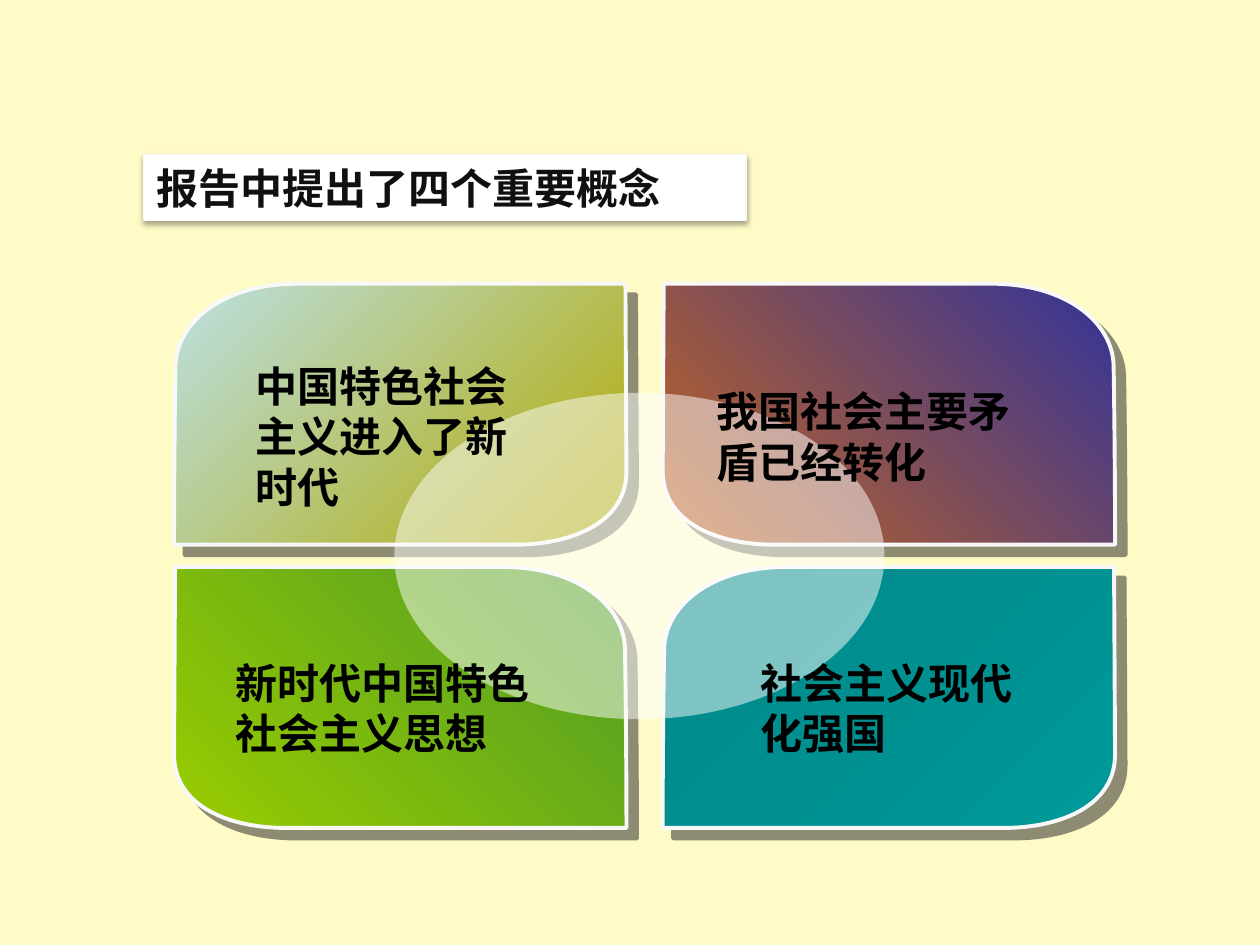
from dataclasses import dataclass

from lxml import etree
from pptx import Presentation, util as u
from pptx.dml.color import RGBColor
from pptx.enum import shapes, text
from pptx.oxml.ns import qn


@dataclass(frozen=True)
class Theme:
    back: str = "FFFBC7"
    card: str = "FFFFFF"
    rim: str = "F9F9F9"
    edge: str = "F8F8F8"
    shade: str = "1C1C1C"
    glow: str = "FEFFFF"
    head: str = "10100F"
    ink: str = "000000"
    black: str = "000000"
    face: str = "Arial"
    title: str = "Noto Sans CJK SC"
    size: int = 24


# Outline of one petal in hundredths of a centimetre: a start point,
# then three control points for each Bezier curve.
PETAL = [
    (214, 526),
    (562, 526), (912, 526), (912, 526),
    (912, 526), (912, 345), (909, 165),
    (907, 79), (815, 0), (663, 0),
    (331, 0), (2, 0), (2, 0),
    (2, 0), (1, 190), (0, 378),
    (0, 478), (102, 523), (214, 526),
]


class Deck:
    def __init__(self, theme):
        self.theme = theme
        self.prs = Presentation()
        self.prs.slide_width, self.prs.slide_height = u.Cm(25.4), u.Cm(19.05)
        self.slide = self.prs.slides.add_slide(self.prs.slide_layouts[6])
        self.fill(self.slide.background, theme.back)

    def fill(self, item, tone):
        item.fill.solid()
        item.fill.fore_color.rgb = RGBColor.from_string(tone)

    def line(self, shape, tone, width):
        shape.line.color.rgb = RGBColor.from_string(tone)
        shape.line.width = u.Pt(width)

    def cast(self, shape, tone, alpha, blur, dist, angle):
        """Give the shape an outer shadow; blur and dist are in points."""
        shape.shadow.inherit = False
        box = shape._element.spPr.find(qn("a:effectLst"))
        shade = etree.SubElement(
            box, qn("a:outerShdw"), blurRad=str(u.Pt(blur)),
            dist=str(u.Pt(dist)), dir=str(angle * 60000),
            algn="ctr", rotWithShape="0")
        self.fade(etree.SubElement(shade, qn("a:srgbClr"), val=tone), alpha)

    def fade(self, node, alpha):
        etree.SubElement(node, qn("a:alpha"), val=str(alpha * 1000))

    def letter(self, shape, words, face, tone):
        """Put bold, left-aligned words into the shape."""
        frame = shape.text_frame
        frame.word_wrap = True
        frame.text = words
        para = frame.paragraphs[0]
        para.alignment = text.PP_ALIGN.LEFT
        font = para.font
        font.name, font.size, font.bold = face, u.Pt(self.theme.size), True
        font.color.rgb = RGBColor.from_string(tone)

    def shape(self, kind, box, tone):
        item = self.slide.shapes.add_shape(kind, *map(u.Cm, box))
        item.shadow.inherit = False
        self.fill(item, tone)
        return item

    def banner(self, words, box):
        look = self.theme
        item = self.shape(shapes.MSO_SHAPE.RECTANGLE, box, look.card)
        self.line(item, look.rim, 0.75)
        self.cast(item, look.black, 35, 3.1, 1.8, 90)
        self.letter(item, words, look.title, look.head)

    def petal(self, left, top, tones, flip):
        pen = self.slide.shapes.build_freeform(*PETAL[0], scale=u.Cm(0.01))
        pen.add_line_segments(PETAL[1:], close=True)
        item = pen.convert_to_shape(u.Cm(left), u.Cm(top))
        self.curve(item)
        if flip:
            item._element.spPr.find(qn("a:xfrm")).set("flipH", "1")
        item.fill.gradient()
        item.fill.gradient_angle = 45
        for stop, tone in zip(item.fill.gradient_stops, tones):
            stop.color.rgb = RGBColor.from_string(tone)
        self.line(item, self.theme.edge, 2.25)
        self.cast(item, self.theme.shade, 50, 0, 8.5, 45)

    def curve(self, item):
        """Turn each run of three line segments into one Bezier curve."""
        lines = list(item._element.iter(qn("a:lnTo")))
        for i in range(0, len(lines), 3):
            bend = etree.Element(qn("a:cubicBezTo"))
            lines[i].addprevious(bend)
            for part in lines[i:i + 3]:
                bend.append(part[0])
                part.getparent().remove(part)

    def oval(self, box):
        item = self.shape(shapes.MSO_SHAPE.OVAL, box, self.theme.glow)
        item.line.fill.background()
        fill = item._element.spPr.find(qn("a:solidFill"))
        self.fade(fill[0], 50)

    def label(self, words, box):
        item = self.slide.shapes.add_textbox(*map(u.Cm, box))
        self.letter(item, words, self.theme.face, self.theme.ink)


def main():
    deck = Deck(Theme())
    deck.banner("报告中提出了四个重要概念", (2.9, 3.12, 12.14, 1.32))

    tones = [
        [("B2A900", "BBE0E3"), ("C4661E", "333399")],
        [("99CC00", "4E9B27"), ("009999", "008787")],
    ]
    for row, top in enumerate((5.72, 11.43)):
        for col, left in enumerate((3.51, 13.36)):
            deck.petal(left, top, tones[row][col], flip=row == col)
    deck.oval((7.95, 7.92, 9.88, 6.58))

    deck.label("我国社会主要矛盾已经转化", (14.2, 7.65, 7.19, 2.29))
    deck.label("中国特色社会主义进入了新时代", (4.9, 7.14, 6.35, 3.3))
    deck.label("新时代中国特色社会主义思想", (4.5, 13.13, 7.04, 2.29))
    deck.label("社会主义现代化强国", (15.09, 13.13, 6.35, 2.29))
    deck.prs.save("out.pptx")


if __name__ == "__main__":
    main()
